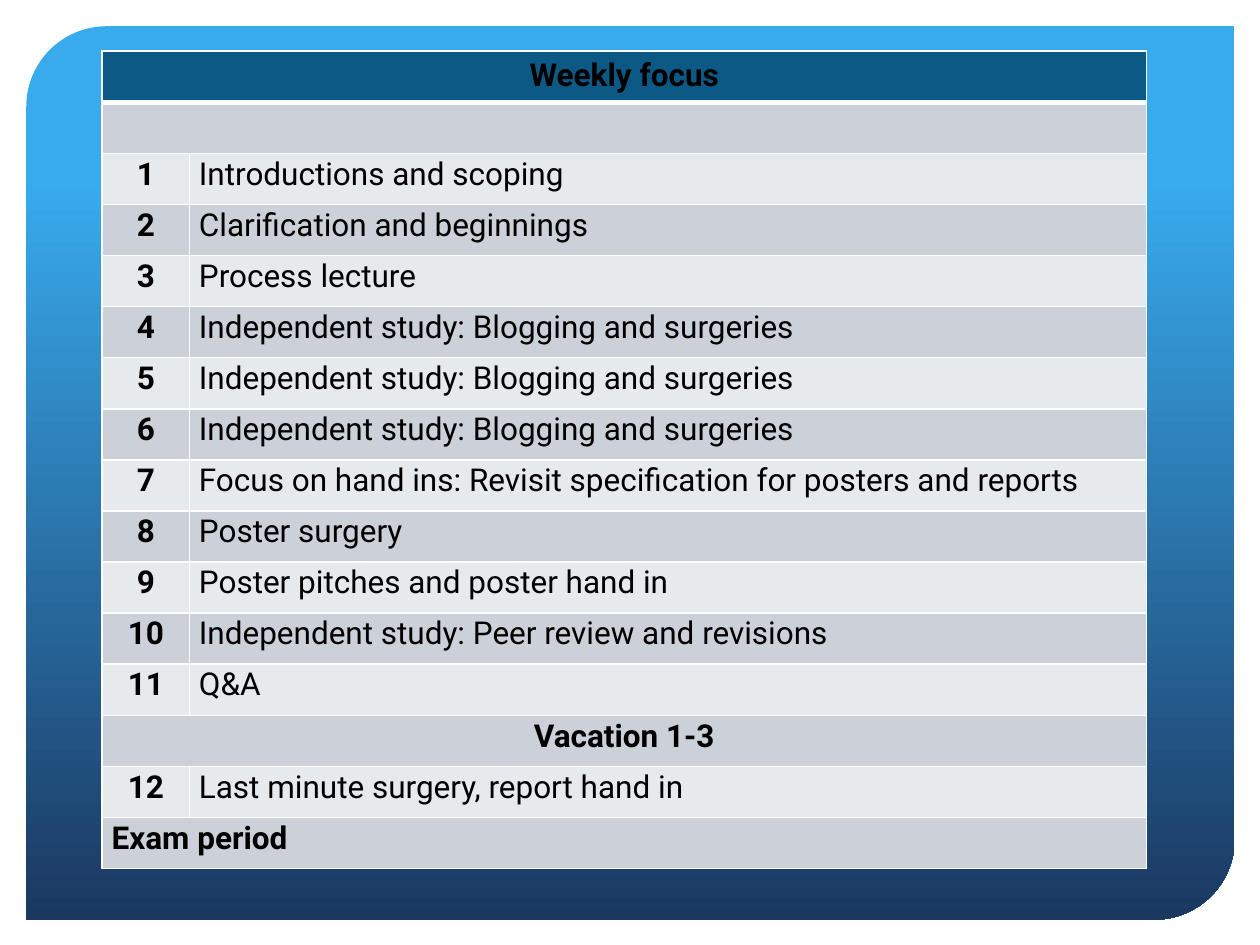
"""Build the weekly focus slide with its timetable."""
from lxml.etree import SubElement
from pptx import Presentation
from pptx.dml.color import RGBColor
from pptx.enum.shapes import MSO_SHAPE
from pptx.enum.text import PP_ALIGN
from pptx.oxml.ns import qn
from pptx.util import Cm, Pt

SKY = RGBColor(0x38, 0xAB, 0xED)
NAVY = RGBColor(0x1B, 0x38, 0x61)
TEAL = RGBColor(0x0C, 0x59, 0x86)
GREY = RGBColor(0xCC, 0xD1, 0xD9)
PALE = RGBColor(0xE7, 0xEA, 0xED)
BLACK = RGBColor(0, 0, 0)
WHITE = RGBColor(0xFF, 0xFF, 0xFF)

STUDY = "Independent study: Blogging and surgeries"
ROWS = [
    ("Weekly focus",),
    ("",),
    ("1", "Introductions and scoping"),
    ("2", "Clarification and beginnings"),
    ("3", "Process lecture"),
    ("4", STUDY),
    ("5", STUDY),
    ("6", STUDY),
    ("7", "Focus on hand ins: Revisit specification for posters and reports"),
    ("8", "Poster surgery"),
    ("9", "Poster pitches and poster hand in"),
    ("10", "Independent study: Peer review and revisions"),
    ("11", "Q&A"),
    ("Vacation 1-3",),
    ("12", "Last minute surgery, report hand in"),
    ("Exam period",),
]


def border(cell, side, width):
    line = SubElement(cell._tc.get_or_add_tcPr(), qn(f"a:ln{side}"), w=str(Pt(width)))
    fill = SubElement(line, qn("a:solidFill"))
    SubElement(fill, qn("a:srgbClr"), val=str(WHITE))


deck = Presentation()
deck.slide_width, deck.slide_height = Cm(25.4), Cm(19.05)
slide = deck.slides.add_slide(deck.slide_layouts[6])

panel = slide.shapes.add_shape(
    MSO_SHAPE.ROUND_2_DIAG_RECTANGLE, Cm(0.53), Cm(0.53), Cm(24.36), Cm(18.01))
panel.adjustments[0] = 0.09
panel.shadow.inherit = False
panel.line.fill.background()
panel.fill.gradient()
panel.fill.gradient_angle = 270
for stop, color, place in zip(panel.fill.gradient_stops, (SKY, NAVY), (0.17, 1)):
    stop.color.rgb = color
    stop.position = place

high = Cm(1.03)
table = slide.shapes.add_table(
    len(ROWS), 2, Cm(2.06), Cm(1.03), Cm(21.05), high * len(ROWS)).table
table.columns[0].width, table.columns[1].width = Cm(1.76), Cm(19.29)

for i, texts in enumerate(ROWS):
    table.rows[i].height = high
    if len(texts) == 1:
        table.cell(i, 0).merge(table.cell(i, 1))
    for j, cell in enumerate(table.rows[i].cells):
        for side in "LRTB":
            thick = (i, side) in ((0, "B"), (1, "T"))
            border(cell, side, 3 if thick else 1)
        cell.fill.solid()
        cell.fill.fore_color.rgb = TEAL if i == 0 else PALE if len(texts) == 2 and i % 2 == 0 else GREY
        if j >= len(texts):
            continue
        cell.text = texts[j]
        para = cell.text_frame.paragraphs[0]
        if i > 1:
            cell.margin_left = cell.margin_right = Cm(0.19)
            cell.margin_top = cell.margin_bottom = 0
            para.line_spacing = 1.07
        left = j == 1 or texts[0] == "Exam period"
        para.alignment = PP_ALIGN.LEFT if left else PP_ALIGN.CENTER
        para.font.name = "Roboto"
        para.font.size = Pt(18)
        para.font.bold = j == 0
        para.font.color.rgb = BLACK

deck.save("out.pptx")
